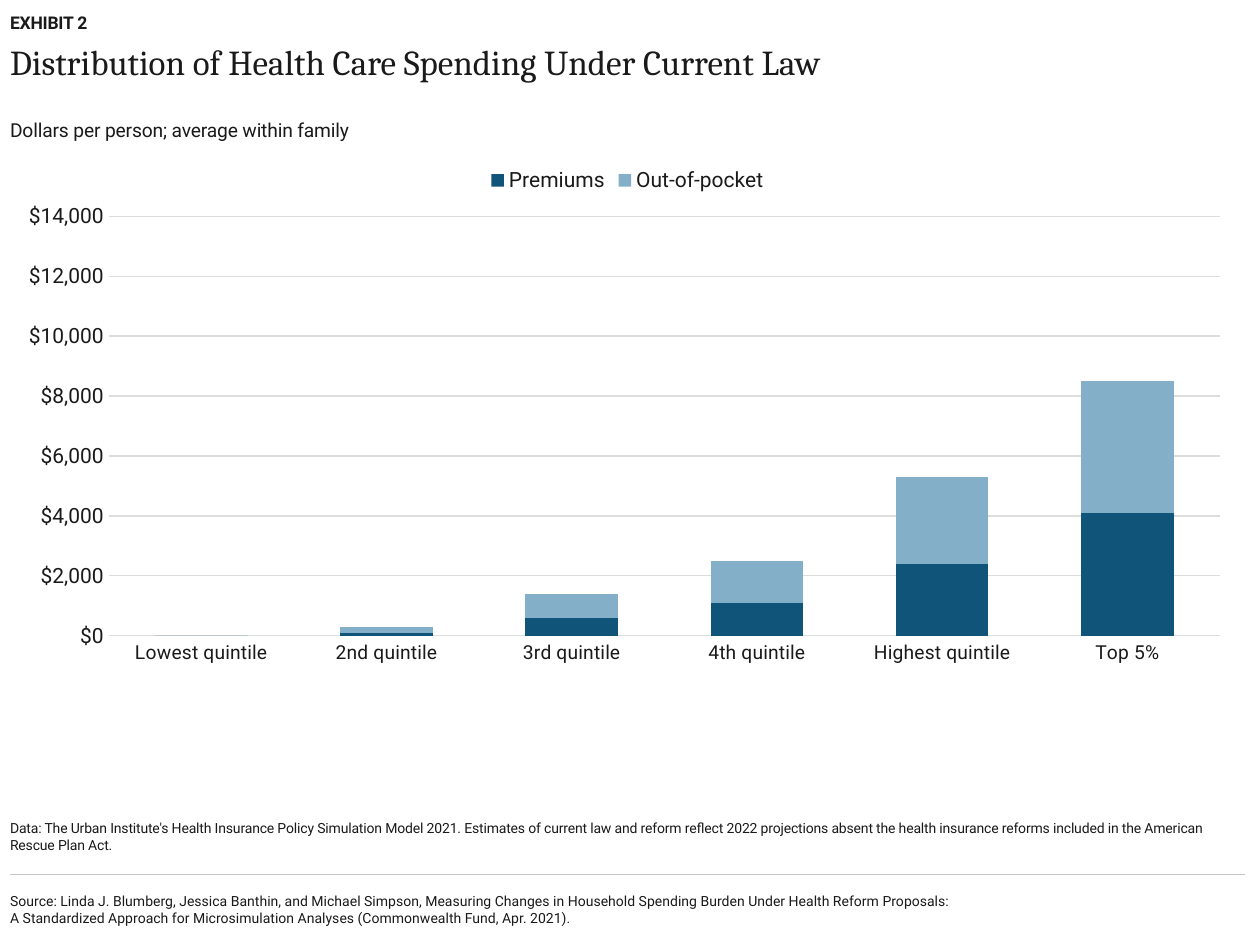
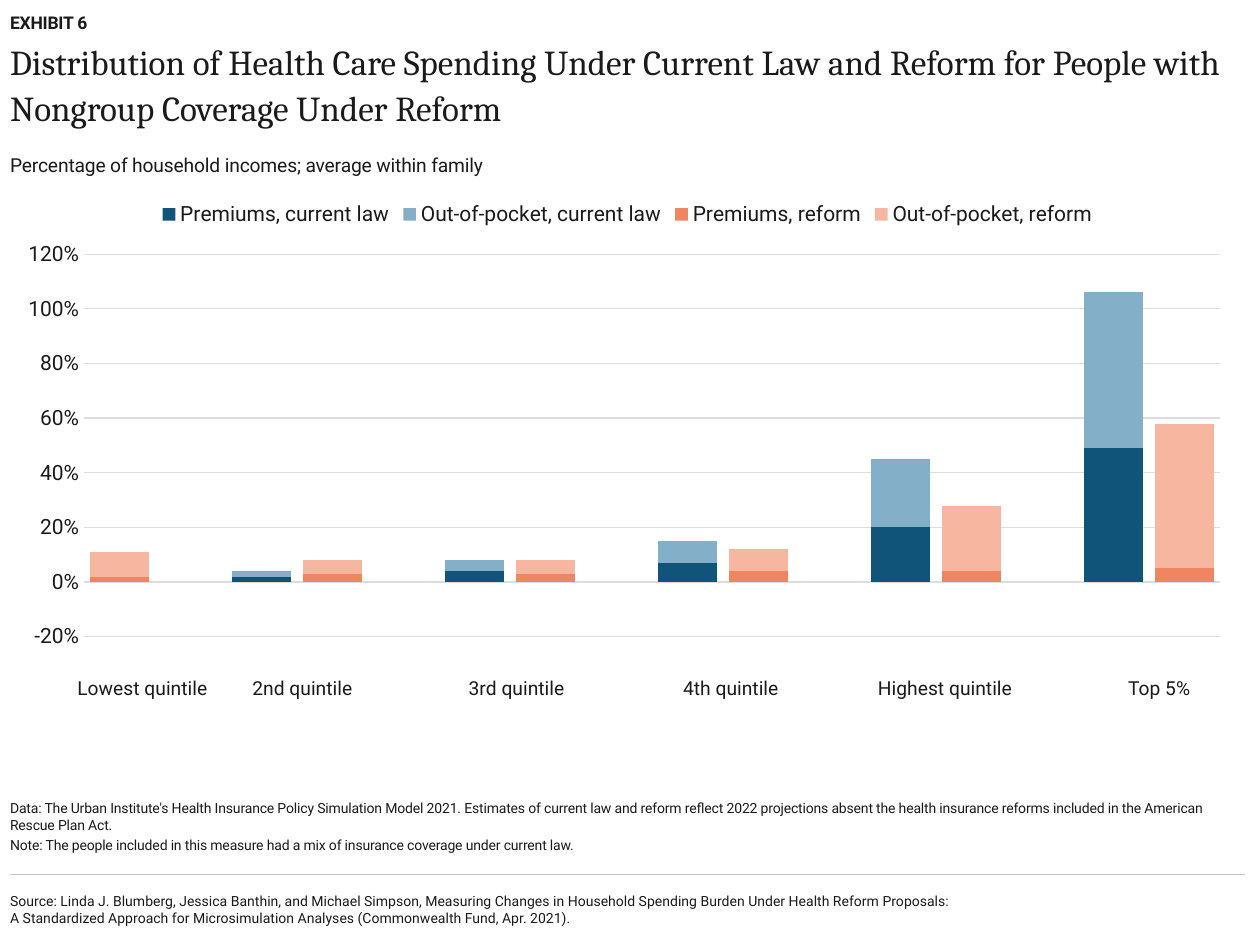
from dataclasses import dataclass
from typing import NamedTuple, Optional

from lxml import etree
from pptx import Presentation
from pptx import util as u
from pptx.chart import data
from pptx.dml import color
from pptx.enum import chart as ec
from pptx.enum import shapes as es
from pptx.enum import text as et
from pptx.oxml import ns


@dataclass(frozen=True)
class Theme:
    ink: str = "1A1A1A"
    grid: str = "DDDDDD"
    rule: str = "C6C6C6"
    navy: str = "115479"
    sky: str = "83B0C8"
    coral: str = "F08661"
    peach: str = "F6B6A0"
    serif: str = "Cambria"
    sans: str = "Roboto"
    title: int = 20
    key: int = 12
    label: int = 11
    base: int = 10
    small: int = 8


T = Theme()
LEFT, WIDE = 0.08, 9.8


class Box(NamedTuple):
    x: float
    y: float
    w: float
    h: float


class Style(NamedTuple):
    size: int
    face: str = T.sans
    bold: bool = False
    anchor: et.MSO_ANCHOR = et.MSO_ANCHOR.MIDDLE
    align: Optional[et.PP_ALIGN] = None
    lead: Optional[float] = None
    gap: float = 0
    track: int = 0


class Bars(NamedTuple):
    name: str
    fill: str
    vals: list


@dataclass(frozen=True)
class Plot:
    box: Box
    inner: Box  # shares of the chart's width and height
    cats: list
    bars: list
    gap: int
    low: float
    high: float
    step: float
    form: str
    names: bool  # show the category axis


@dataclass(frozen=True)
class Page:
    tag: str
    title: str
    unit: str
    unit_box: Box
    notes: list
    plot: Plot


# Text styles
TITLE = Style(T.title, T.serif, anchor=et.MSO_ANCHOR.TOP, lead=1.1)
TAG = Style(T.base, bold=True, anchor=et.MSO_ANCHOR.BOTTOM, track=-10)
UNIT = Style(T.label, track=-10)
NOTE = Style(T.small, anchor=et.MSO_ANCHOR.BOTTOM, gap=1.6, track=-10)
SOURCE = Style(T.small)
LABEL = Style(T.label, align=et.PP_ALIGN.CENTER)

# Shared wording
SOURCE_TEXT = [
    "Source: Linda J. Blumberg, Jessica Banthin, and Michael Simpson, Measuring Changes in "
    "Household Spending Burden Under Health Reform Proposals:",
    "A Standardized Approach for Microsimulation Analyses (Commonwealth Fund, Apr. 2021).",
]
DATA_TEXT = (
    "Data: The Urban Institute's Health Insurance Policy Simulation Model 2021. Estimates of "
    "current law and reform reflect 2022 projections absent the health insurance reforms "
    "included in the American Rescue Plan Act."
)
GROUPS = ["Lowest quintile", "2nd quintile", "3rd quintile", "4th quintile",
          "Highest quintile", "Top 5%"]


def rgb(code: str) -> color.RGBColor:
    return color.RGBColor.from_string(code)


def set_font(font, size: int, face: str = T.sans) -> None:
    font.size, font.name = u.Pt(size), face
    font.color.rgb = rgb(T.ink)


def set_line(line, code: str) -> None:
    line.color.rgb = rgb(code)
    line.width = u.Pt(0.75)


def add_text(slide, box: Box, lines: list, style: Style) -> None:
    frame = slide.shapes.add_textbox(*map(u.Inches, box)).text_frame
    frame.word_wrap = True
    frame.vertical_anchor = style.anchor
    frame.margin_left = frame.margin_right = frame.margin_top = frame.margin_bottom = 0
    for i, line in enumerate(lines):
        para = frame.add_paragraph() if i else frame.paragraphs[0]
        para.text = line
        para.alignment = style.align
        if style.lead:
            para.line_spacing = style.lead
        if i and style.gap:
            para.space_before = u.Pt(style.gap)
        set_font(para.font, style.size, style.face)
        para.font.bold = style.bold
        if style.track:
            para.font._rPr.set("spc", str(style.track))


def add_rule(slide, y: float) -> None:
    line = slide.shapes.add_connector(
        es.MSO_CONNECTOR.STRAIGHT, u.Inches(LEFT), u.Inches(y),
        u.Inches(LEFT + WIDE), u.Inches(y))
    set_line(line.line, T.rule)
    etree.SubElement(line._element.spPr, ns.qn("a:effectLst"))


def place_plot(chart, inner: Box) -> None:
    """Fix the inner plot area within the chart."""
    area = chart._chartSpace.chart.plotArea
    for old in area.findall(ns.qn("c:layout")):
        area.remove(old)
    layout = etree.Element(ns.qn("c:layout"))
    area.insert(0, layout)
    manual = etree.SubElement(layout, ns.qn("c:manualLayout"))
    marks = [("layoutTarget", "inner"), ("xMode", "edge"), ("yMode", "edge"),
             *inner._asdict().items()]
    for name, val in marks:
        etree.SubElement(manual, ns.qn(f"c:{name}")).set("val", str(val))


def add_plot(slide, plot: Plot) -> None:
    feed = data.CategoryChartData()
    feed.categories = plot.cats
    for bar in plot.bars:
        feed.add_series(bar.name, bar.vals)
    chart = slide.shapes.add_chart(
        ec.XL_CHART_TYPE.COLUMN_STACKED, *map(u.Inches, plot.box), feed).chart
    chart.has_title = False
    set_font(chart.font, T.base)

    # Columns
    cols = chart.plots[0]
    cols.gap_width, cols.overlap, cols.vary_by_categories = plot.gap, 100, False
    for row, bar in zip(cols.series, plot.bars):
        row.format.fill.solid()
        row.format.fill.fore_color.rgb = rgb(bar.fill)

    # Legend
    chart.has_legend = True
    chart.legend.position = ec.XL_LEGEND_POSITION.TOP
    chart.legend.include_in_layout = False
    set_font(chart.legend.font, T.key)

    # Axes
    vert, base = chart.value_axis, chart.category_axis
    vert.minimum_scale, vert.maximum_scale = plot.low, plot.high
    vert.major_unit = plot.step
    vert.major_tick_mark = base.major_tick_mark = ec.XL_TICK_MARK.NONE
    vert.format.line.fill.background()
    set_line(vert.major_gridlines.format.line, T.grid)
    set_font(vert.tick_labels.font, T.key)
    vert.tick_labels.number_format = plot.form
    vert.tick_labels.number_format_is_linked = False
    base.visible = plot.names
    if plot.names:
        set_line(base.format.line, T.grid)
        set_font(base.tick_labels.font, T.label)
    place_plot(chart, plot.inner)


def add_page(deck, page: Page):
    slide = deck.slides.add_slide(deck.slide_layouts[6])
    add_text(slide, Box(LEFT, 6.99, 7.99, 0.46), SOURCE_TEXT, SOURCE)
    add_rule(slide, 6.94)
    add_text(slide, Box(LEFT, 0.29, WIDE, 0.83), [page.title], TITLE)
    add_plot(slide, page.plot)
    add_text(slide, Box(LEFT, 0.05, WIDE, 0.21), [page.tag], TAG)
    add_text(slide, Box(LEFT, 5.95, WIDE, 0.82), page.notes, NOTE)
    add_text(slide, page.unit_box, [page.unit], UNIT)
    return slide


def spread(vals: list, first: int) -> list:
    """Put values in every third of 16 slots, leaving the rest empty."""
    row = [None] * 16
    row[first::3] = vals
    return row


SPEND = Page(
    "EXHIBIT 2",
    "Distribution of Health Care Spending Under Current Law",
    "Dollars per person; average within family",
    Box(LEFT, 0.89, WIDE, 0.28),
    [DATA_TEXT],
    Plot(
        Box(LEFT, 1.22, WIDE, 4.97), Box(0.08, 0.1, 0.9, 0.67), GROUPS,
        [Bars("Premiums", T.navy, [0, 100, 600, 1100, 2400, 4100]),
         Bars("Out-of-pocket", T.sky, [0, 200, 800, 1400, 2900, 4400])],
        gap=100, low=0, high=14000, step=2000, form='"$"#,##0', names=True),
)

REFORM = Page(
    "EXHIBIT 6",
    "Distribution of Health Care Spending Under Current Law and Reform for People with "
    "Nongroup Coverage Under Reform",
    "Percentage of household incomes; average within family",
    Box(LEFT, 1.17, WIDE, 0.27),
    [DATA_TEXT,
     "Note: The people included in this measure had a mix of insurance coverage under "
     "current law."],
    Plot(
        Box(LEFT, 1.49, WIDE, 4.4), Box(0.06, 0.12, 0.92, 0.69),
        [str(n) for n in range(1, 17)],
        [Bars("Premiums, current law", T.navy, spread([0.02, 0.04, 0.07, 0.2, 0.49], 2)),
         Bars("Out-of-pocket, current law", T.sky,
              spread([0.02, 0.04, 0.08, 0.25, 0.57], 2)),
         Bars("Premiums, reform", T.coral,
              spread([0.02, 0.03, 0.03, 0.04, 0.04, 0.05], 0)),
         Bars("Out-of-pocket, reform", T.peach,
              spread([0.09, 0.05, 0.05, 0.08, 0.24, 0.53], 0))],
        gap=20, low=-0.2, high=1.2, step=0.2, form="0%", names=False),
)


def main() -> None:
    deck = Presentation()
    deck.slide_width, deck.slide_height = u.Inches(10), u.Inches(7.5)
    add_page(deck, SPEND)
    slide = add_page(deck, REFORM)

    # Group names under the paired columns; the first group has one column
    mids = [1.13] + [2.4 + 1.7 * i for i in range(5)]
    for mid, name in zip(mids, GROUPS):
        add_text(slide, Box(mid - 0.66, 5.31, 1.32, 0.29), [name], LABEL)
    deck.save("out.pptx")


if __name__ == "__main__":
    main()
